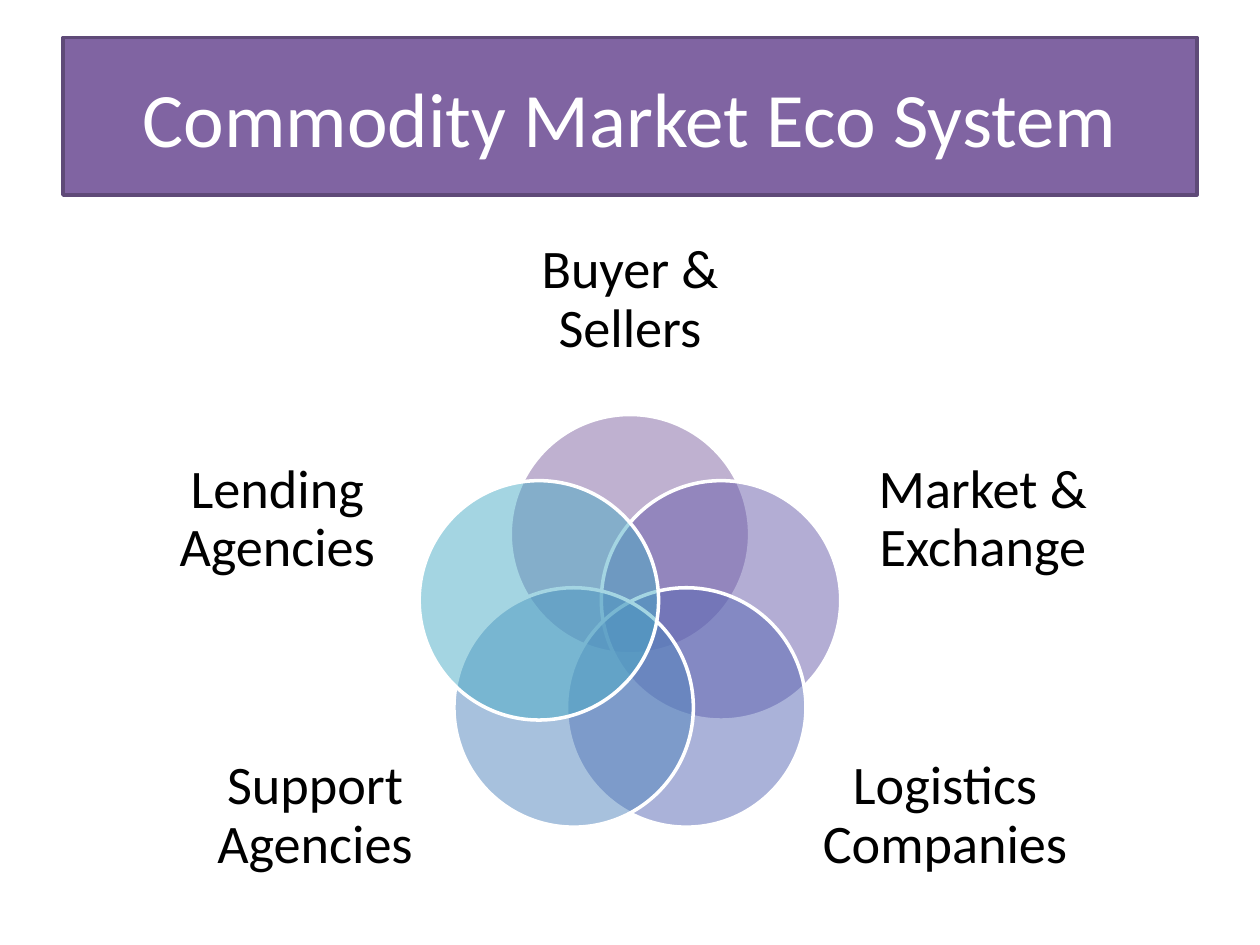
import dataclasses
import math

import lxml.etree
import pptx
import pptx.dml.color
import pptx.enum.shapes
import pptx.enum.text
import pptx.oxml.ns
import pptx.util

WIDTH, HEIGHT = 10, 7.5


@dataclasses.dataclass(frozen=True)
class Theme:
    font: str = "Calibri"
    title_size: int = 44
    label_size: int = 31
    line_width: int = 2
    circle_alpha: int = 50
    title_fill: str = "8064A2"
    title_line: str = "5F4A78"
    light: str = "FFFFFF"
    dark: str = "000000"
    circles: tuple = ("8064A2", "685DAB", "5767B4", "5185BD", "4BACC6")


THEME = Theme()
NAMES = ("Buyer & Sellers", "Market & Exchange", "Logistics Companies",
         "Support Agencies", "Lending Agencies")
RING_X, RING_Y = 0.5, 2 / 3
RING_RADIUS = 0.76
DIAMETER = 1.9
LABEL_ROWS = ((0, 0.318, 2.2, 1.27), (0.28, 0.55, 1.97, 1.38), (0.25, 0.864, 1.97, 1.38))


def rgb(color):
    return pptx.dml.color.RGBColor.from_string(color)


def centred_box(cx, cy, w, h):
    return [pptx.util.Inches(v) for v in (cx - w / 2, cy - h / 2, w, h)]


def write_text(sp, text, *, size, color, spacing=1.0, margin=0.1):
    tf = sp.text_frame
    tf.word_wrap = True
    tf.vertical_anchor = pptx.enum.text.MSO_ANCHOR.MIDDLE
    tf.margin_left = tf.margin_right = pptx.util.Inches(margin)
    tf.margin_top = tf.margin_bottom = pptx.util.Inches(margin / 2)
    p = tf.paragraphs[0]
    p.alignment = pptx.enum.text.PP_ALIGN.CENTER
    p.line_spacing = spacing
    r = p.add_run()
    r.text = text
    r.font.name = THEME.font
    r.font.size = pptx.util.Pt(size)
    r.font.color.rgb = rgb(color)


def add_solid(shapes, kind, box, *, fill, line, alpha=100):
    sp = shapes.add_shape(kind, *box)
    sp.shadow.inherit = False
    sp.fill.solid()
    sp.fill.fore_color.rgb = rgb(fill)
    sp.line.color.rgb = rgb(line)
    sp.line.width = pptx.util.Pt(THEME.line_width)
    if alpha < 100:
        qn = pptx.oxml.ns.qn
        clr = sp.fill._xPr.find(qn("a:solidFill")).find(qn("a:srgbClr"))
        lxml.etree.SubElement(clr, qn("a:alpha"), val=str(alpha * 1000))
    return sp


def add_title(shapes, text):
    box = centred_box(WIDTH / 2, HEIGHT * 0.123, WIDTH * 0.9, HEIGHT / 6)
    sp = add_solid(shapes, pptx.enum.shapes.MSO_SHAPE.RECTANGLE, box,
                   fill=THEME.title_fill, line=THEME.title_line)
    write_text(sp, text, size=THEME.title_size, color=THEME.light)


def add_circle(shapes, index, color):
    angle = index * math.tau / len(NAMES)
    cx = WIDTH * RING_X + RING_RADIUS * math.sin(angle)
    cy = HEIGHT * RING_Y - RING_RADIUS * math.cos(angle)
    add_solid(shapes, pptx.enum.shapes.MSO_SHAPE.OVAL,
              centred_box(cx, cy, DIAMETER, DIAMETER),
              fill=color, line=THEME.light, alpha=THEME.circle_alpha)


def add_label(shapes, index, text):
    row = min(index, len(NAMES) - index)
    side = 1 if index == row else -1
    offset, cy, w, h = LABEL_ROWS[row]
    cx = WIDTH * (RING_X + side * offset)
    sp = shapes.add_textbox(*centred_box(cx, HEIGHT * cy, w, h))
    write_text(sp, text, size=THEME.label_size, color=THEME.dark, spacing=0.9, margin=0)


def main():
    prs = pptx.Presentation()
    prs.slide_width = pptx.util.Inches(WIDTH)
    prs.slide_height = pptx.util.Inches(HEIGHT)
    s = prs.slides.add_slide(prs.slide_layouts[6])
    add_title(s.shapes, "Commodity Market Eco System")
    venn = s.shapes.add_group_shape()
    for index, (name, color) in enumerate(zip(NAMES, THEME.circles)):
        add_circle(venn.shapes, index, color)
        add_label(venn.shapes, index, name)
    prs.save("out.pptx")


if __name__ == "__main__":
    main()
